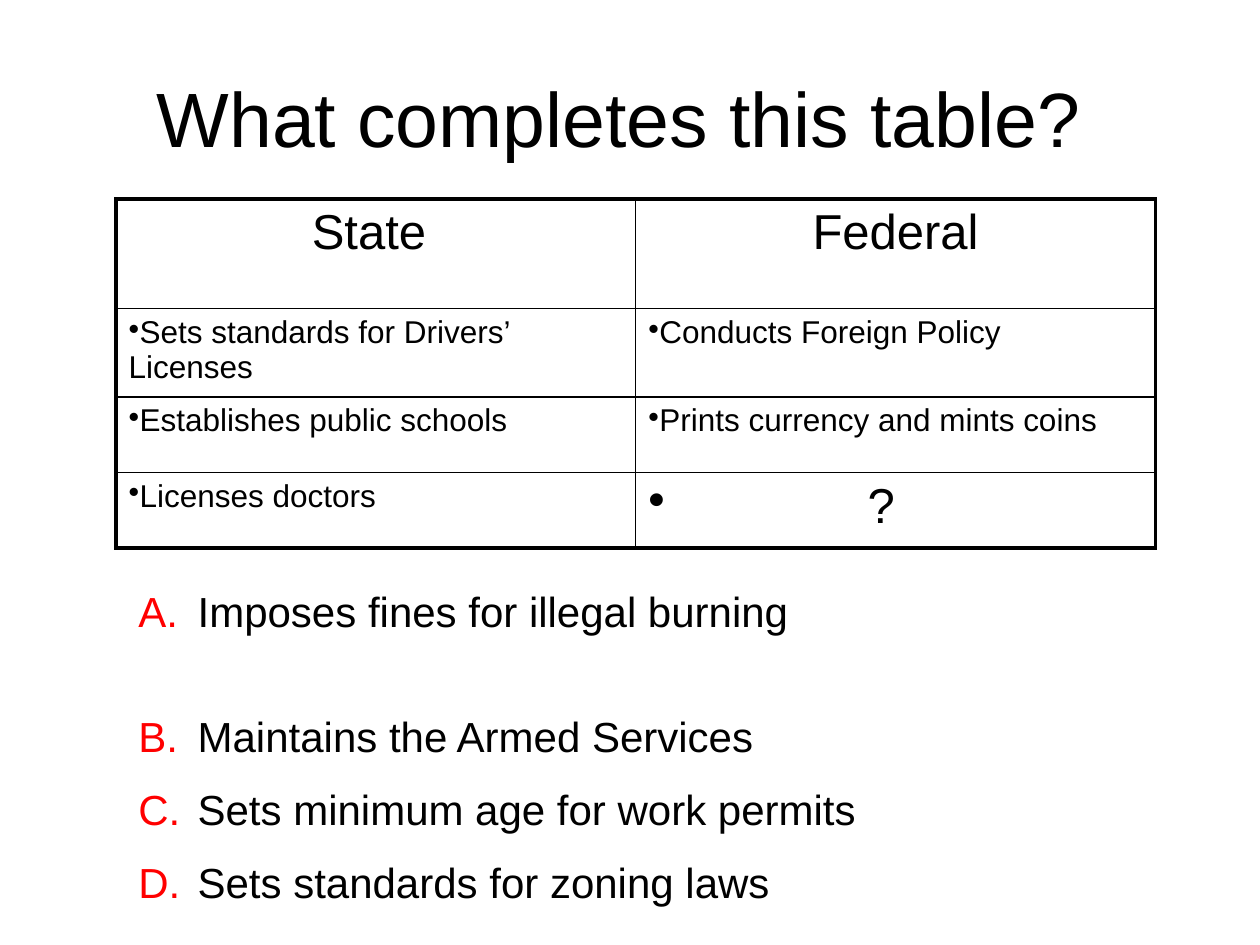
from lxml import etree
from pptx import Presentation
from pptx.dml.color import RGBColor
from pptx.enum.text import MSO_ANCHOR, PP_ALIGN
from pptx.oxml.ns import qn
from pptx.util import Inches, Pt

MID, TOP = MSO_ANCHOR.MIDDLE, MSO_ANCHOR.TOP
CENTER, LEFT = PP_ALIGN.CENTER, PP_ALIGN.LEFT
BLACK, RED = "000000", "FF0000"
THICK, THIN = 2.25, 1

TITLE = "What completes this table? "
ROWS = [
    ("State ", "Federal"),
    ("Sets standards for Drivers’ Licenses", "Conducts Foreign Policy"),
    ("Establishes public schools", "Prints currency and mints coins"),
    ("Licenses doctors", "?"),
]
HEIGHTS = [0.87, 0.7, 0.6, 0.6]
WIDTH = 4.125
CHOICES = [
    ("Imposes fines for illegal burning", 2.5),
    ("Maintains the Armed Services", 42.5),
    ("Sets minimum age for work permits", 13),
    ("Sets standards for zoning laws", 13),
]


def color(code):
    return RGBColor.from_string(code)


def write(para, text, size, align=LEFT):
    para.alignment = align
    run = para.add_run()
    run.text = text
    for name, value in {"size": Pt(size), "name": "Arial"}.items():
        setattr(run.font, name, value)
    run.font.color.rgb = color(BLACK)


def node(parent, tag, **attrs):
    return etree.SubElement(parent, qn(tag), attrs)


def bullet(para, indent, kind, tint=None, **attrs):
    props = para._p.get_or_add_pPr()
    props.set("marL", str(Inches(indent)))
    props.set("indent", str(-Inches(indent)))
    if tint:
        node(node(props, "a:buClr"), "a:srgbClr", val=tint)
    node(props, kind, **attrs)


def border(cell, sides):
    props = cell._tc.get_or_add_tcPr()
    for spot, (side, width) in enumerate(sides.items()):
        line = etree.Element(qn("a:ln" + side), w=str(Pt(width)))
        node(node(line, "a:solidFill"), "a:srgbClr", val=BLACK)
        props.insert(spot, line)


def text_box(slide, anchor, *place):
    frame = slide.shapes.add_textbox(*map(Inches, place)).text_frame
    for name, value in {"word_wrap": True, "vertical_anchor": anchor}.items():
        setattr(frame, name, value)
    return frame


def add_grid(slide):
    count, wide = len(ROWS), len(ROWS[0])
    place = (0.92, 1.58, WIDTH * wide, sum(HEIGHTS))
    table = slide.shapes.add_table(count, wide, *map(Inches, place)).table
    table.first_row = table.horz_banding = False
    for col in table.columns:
        col.width = Inches(WIDTH)
    for r, (texts, height) in enumerate(zip(ROWS, HEIGHTS)):
        table.rows[r].height = Inches(height)
        for c, text in enumerate(texts):
            cell = table.cell(r, c)
            cell.fill.background()
            edges = {"L": c == 0, "R": c == wide - 1, "T": r == 0, "B": r == count - 1}
            border(cell, {s: THICK if outer else THIN for s, outer in edges.items()})
            para = cell.text_frame.paragraphs[0]
            head, blank = r == 0, text == "?"
            write(para, text, 28 if head or blank else 18, CENTER if head else LEFT)
            if not head:
                bullet(para, 1.74 if blank else 0, "a:buChar", char="•")


def add_choices(slide):
    frame = text_box(slide, TOP, 1, 4.6, 8.25, 2.9)
    for i, (text, gap) in enumerate(CHOICES):
        para = frame.add_paragraph() if i else frame.paragraphs[0]
        write(para, text, 24)
        para.space_before = Pt(gap)
        bullet(para, 0.47, "a:buAutoNum", RED, type="alphaUcPeriod")


def main():
    deck = Presentation()
    deck.slide_width, deck.slide_height = Inches(10), Inches(7.5)
    slide = deck.slides.add_slide(deck.slide_layouts[6])
    title = text_box(slide, MID, 0.5, 0.3, 9, 1.25)
    write(title.paragraphs[0], TITLE, 44, CENTER)
    add_grid(slide)
    add_choices(slide)
    deck.save("out.pptx")


if __name__ == "__main__":
    main()
